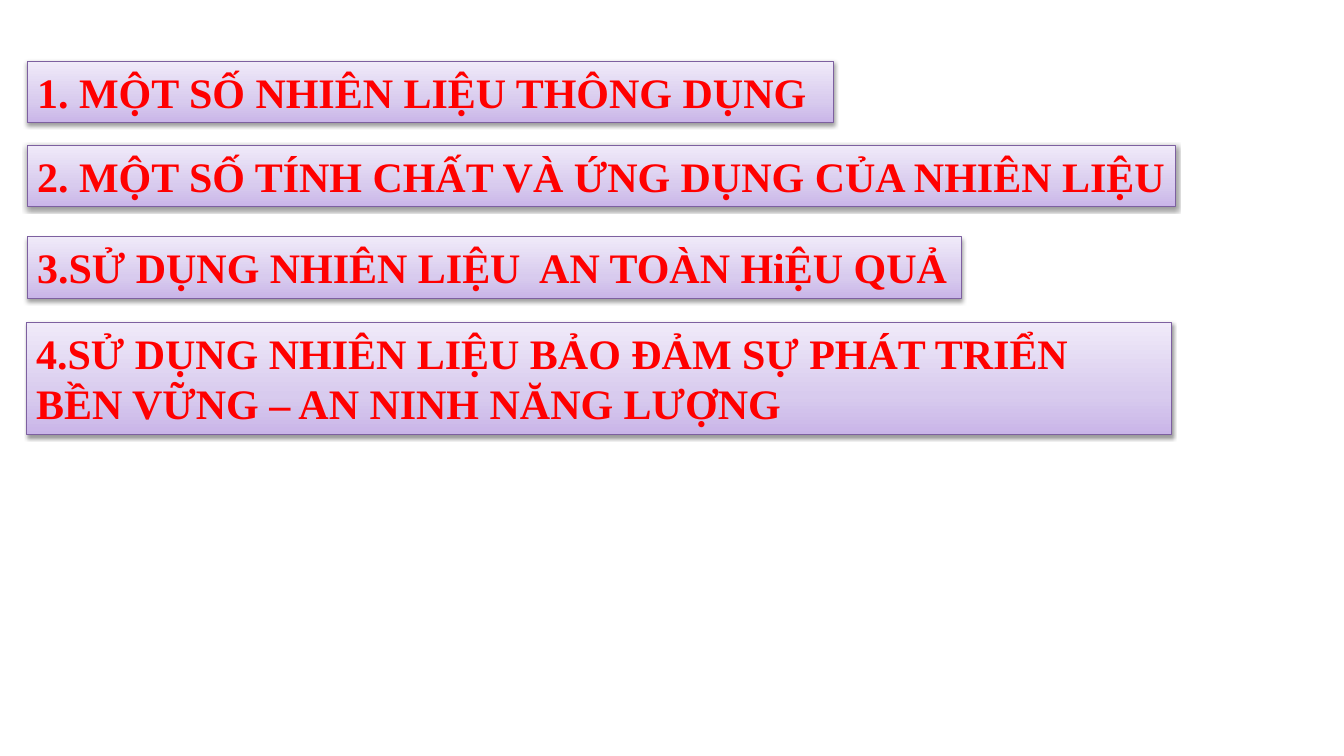
from lxml import etree
from pptx import Presentation
from pptx.dml.color import RGBColor
from pptx.enum.shapes import MSO_SHAPE
from pptx.enum.text import MSO_ANCHOR, MSO_AUTO_SIZE, PP_ALIGN
from pptx.oxml.ns import qn
from pptx.util import Emu, Pt

RECTANGLE = MSO_SHAPE.RECTANGLE
TOP = MSO_ANCHOR.TOP
LEFT = PP_ALIGN.LEFT
GROW = MSO_AUTO_SIZE.SHAPE_TO_FIT_TEXT
PX = 9144
BLANK_LAYOUT = 6
COLORS = {
    "text": "FF0000",
    "border": "7D60A0",
    "lilac": "C9B5E8",
    "lavender": "D8CBEE",
    "mist": "F0EAF9",
    "shadow": "000000",
}
GRADIENT = [(0, "lilac"), (35, "lavender"), (100, "mist")]
HEADINGS = [
    ("1. MỘT SỐ NHIÊN LIỆU THÔNG DỤNG", (27, 61, 800, 61), 10),
    ("2. MỘT SỐ TÍNH CHẤT VÀ ỨNG DỤNG CỦA NHIÊN LIỆU", (27, 144, 1139, 61), 0),
    ("3.SỬ DỤNG NHIÊN LIỆU  AN TOÀN HiỆU QUẢ", (27, 235, 927, 61), 10),
    ("4.SỬ DỤNG NHIÊN LIỆU BẢO ĐẢM SỰ PHÁT TRIỂN BỀN VỮNG – AN NINH NĂNG LƯỢNG",
     (26, 320, 1136, 111), 10),
]


def px(length):
    return Emu(length * PX)


def add_node(parent, tag, **attributes):
    values = {name: str(value) for name, value in attributes.items()}
    return etree.SubElement(parent, qn(tag), values)


class Outline:
    def __init__(self, page):
        self.page = page
        self.font = "Times New Roman"
        self.size = Pt(30)

    def color(self, name):
        return RGBColor.from_string(COLORS[name])

    def gradient(self, box):
        box.fill.gradient()
        box.fill.gradient_angle = 90
        stops = box.element.spPr.find(".//" + qn("a:gsLst"))
        for stop in list(stops):
            stops.remove(stop)
        for position, name in GRADIENT:
            stop = add_node(stops, "a:gs", pos=position * 1000)
            add_node(stop, "a:srgbClr", val=COLORS[name])

    def shadow(self, box):
        box.shadow.inherit = False
        effects = box.element.spPr.find(qn("a:effectLst"))
        shadow = add_node(effects, "a:outerShdw", blurRad=Pt(3.1), dist=Pt(1.6),
                          dir=90 * 60000, rotWithShape=0)
        tint = add_node(shadow, "a:srgbClr", val=COLORS["shadow"])
        add_node(tint, "a:alpha", val=38000)

    def heading(self, text, bounds, right_margin):
        box = self.page.shapes.add_shape(RECTANGLE, *map(px, bounds))
        self.gradient(box)
        box.line.color.rgb = self.color("border")
        box.line.width = Pt(0.75)
        self.shadow(box)
        frame = box.text_frame
        frame.word_wrap = True
        frame.auto_size = GROW
        frame.vertical_anchor = TOP
        frame.margin_right = px(right_margin)
        para = frame.paragraphs[0]
        para.alignment = LEFT
        span = para.add_run()
        span.text = text
        span.font.name = self.font
        span.font.size = self.size
        span.font.bold = True
        span.font.color.rgb = self.color("text")


def main():
    deck = Presentation()
    deck.slide_width = px(1333)
    deck.slide_height = px(750)
    page = deck.slides.add_slide(deck.slide_layouts[BLANK_LAYOUT])
    outline = Outline(page)
    for text, bounds, right_margin in HEADINGS:
        outline.heading(text, bounds, right_margin)
    deck.save("out.pptx")


if __name__ == "__main__":
    main()
